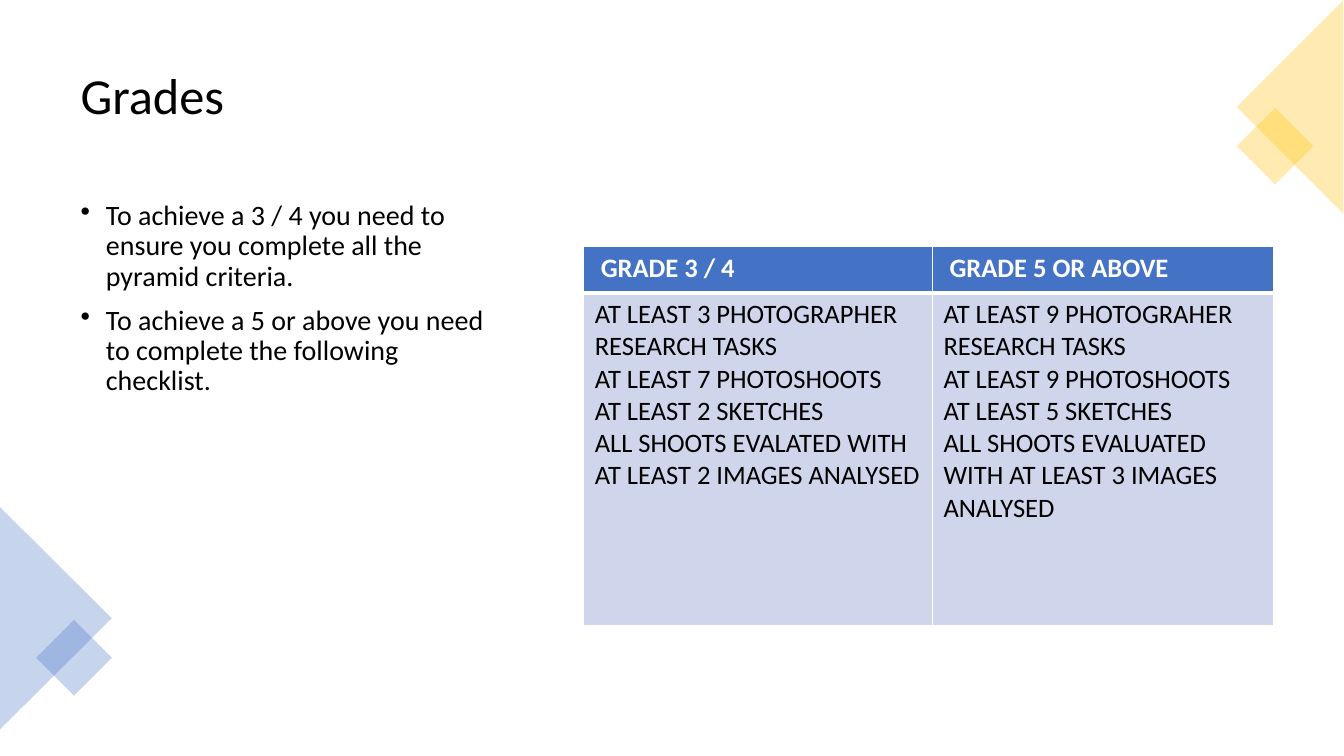
from lxml import etree
from pptx import Presentation
from pptx.dml.color import RGBColor
from pptx.enum.shapes import MSO_SHAPE
from pptx.enum.text import MSO_ANCHOR
from pptx.oxml.ns import qn
from pptx.util import Cm, Pt

TRIANGLE = MSO_SHAPE.ISOSCELES_TRIANGLE
SQUARE = MSO_SHAPE.RECTANGLE
TOP = MSO_ANCHOR.TOP
MIDDLE = MSO_ANCHOR.MIDDLE

BLACK = RGBColor(0x00, 0x00, 0x00)
WHITE = RGBColor(0xFF, 0xFF, 0xFF)
BLUE = RGBColor(0x44, 0x72, 0xC4)
GOLD = RGBColor(0xFF, 0xC0, 0x00)
PALE_BLUE = RGBColor(0xCF, 0xD5, 0xEA)


class GradeSlide:
    font_name = "Calibri"
    accent_opacity = 30

    def __init__(self, presentation):
        self.slide = presentation.slides.add_slide(presentation.slide_layouts[6])

    def fill_text(self, frame, lines, size, color, bold=False):
        frame.text = "\n".join(lines)
        for paragraph in frame.paragraphs:
            font = paragraph.font
            font.name = self.font_name
            font.size = Pt(size)
            font.bold = bold
            font.color.rgb = color

    def text(self, box, lines, size, anchor=TOP, bullets=False):
        frame = self.slide.shapes.add_textbox(*map(Cm, box)).text_frame
        frame.word_wrap = True
        frame.vertical_anchor = anchor
        self.fill_text(frame, lines, size, BLACK)
        for paragraph in frame.paragraphs:
            paragraph.line_spacing = 0.9
            if bullets:
                paragraph.space_before = Pt(10)
                properties = paragraph._p.get_or_add_pPr()
                properties.set("marL", str(Cm(0.64)))
                properties.set("indent", str(Cm(-0.64)))
                bullet = etree.Element(qn("a:buChar"), char="•")
                properties.find(qn("a:defRPr")).addprevious(bullet)

    def accent(self, kind, box, rotation, color):
        accent = self.slide.shapes.add_shape(kind, *map(Cm, box))
        accent.rotation = rotation
        accent.shadow.inherit = False
        accent.line.fill.background()
        accent.fill.solid()
        accent.fill.fore_color.rgb = color
        tint = accent._element.spPr.find(qn("a:solidFill"))[0]
        etree.SubElement(tint, qn("a:alpha"), val=str(self.accent_opacity * 1000))

    def borders(self, cell, **widths):
        properties = cell._tc.get_or_add_tcPr()
        for side in "LRTB":
            line = etree.SubElement(
                properties, qn(f"a:ln{side}"), w=str(Pt(widths.get(side, 1)))
            )
            fill = etree.SubElement(line, qn("a:solidFill"))
            etree.SubElement(fill, qn("a:srgbClr"), val=str(WHITE))

    def cell(self, cell, lines, is_header):
        self.borders(cell, **({"B": 3} if is_header else {"T": 3}))
        cell.fill.solid()
        cell.fill.fore_color.rgb = BLUE if is_header else PALE_BLUE
        cell.margin_left = cell.margin_right = Cm(0.28)
        cell.margin_top = cell.margin_bottom = Cm(0.13)
        color = WHITE if is_header else BLACK
        self.fill_text(cell.text_frame, lines, 19, color, is_header)

    def table(self, left, top, widths, heights, rows):
        table = self.slide.shapes.add_table(
            len(heights), len(widths),
            Cm(left), Cm(top), Cm(sum(widths)), Cm(sum(heights)),
        ).table
        for column, width in zip(table.columns, widths):
            column.width = Cm(width)
        for row, height in zip(table.rows, heights):
            row.height = Cm(height)
        for row_index, row in enumerate(rows):
            for column_index, lines in enumerate(row):
                self.cell(table.cell(row_index, column_index), lines, row_index == 0)


CRITERIA = [
    [[" GRADE 3 / 4"], [" GRADE 5 OR ABOVE"]],
    [
        [
            "AT LEAST 3 PHOTOGRAPHER RESEARCH TASKS",
            "AT LEAST 7 PHOTOSHOOTS",
            "AT LEAST 2 SKETCHES",
            "ALL SHOOTS EVALATED WITH AT LEAST 2 IMAGES ANALYSED",
        ],
        [
            "AT LEAST 9 PHOTOGRAHER RESEARCH TASKS",
            "AT LEAST 9 PHOTOSHOOTS",
            "AT LEAST 5 SKETCHES",
            "ALL SHOOTS EVALUATED WITH AT LEAST 3 IMAGES ANALYSED",
        ],
    ],
]

ADVICE = [
    "To achieve a 3 / 4 you need to ensure you complete all the pyramid criteria.",
    "To achieve a 5 or above you need to complete the following checklist.",
]


def main():
    presentation = Presentation()
    presentation.slide_width = Cm(33.87)
    presentation.slide_height = Cm(19.05)
    grades = GradeSlide(presentation)
    grades.text((1.78, 0.89, 30.3, 3.15), ["Grades"], 36, anchor=MIDDLE)
    grades.text((1.78, 4.95, 11.13, 12.22), ADVICE, 20, bullets=True)
    grades.accent(TRIANGLE, (-1.4, 14.17, 5.61, 2.82), 90, BLUE)
    grades.accent(SQUARE, (1.19, 15.9, 1.35, 1.35), 45, BLUE)
    grades.accent(SQUARE, (31.45, 3, 1.37, 1.37), 45, GOLD)
    grades.accent(TRIANGLE, (29.82, 1.35, 5.38, 2.69), 270, GOLD)
    grades.table(14.71, 6.22, (8.79, 8.59), (1.17, 8.38), CRITERIA)
    presentation.save("out.pptx")


if __name__ == "__main__":
    main()
